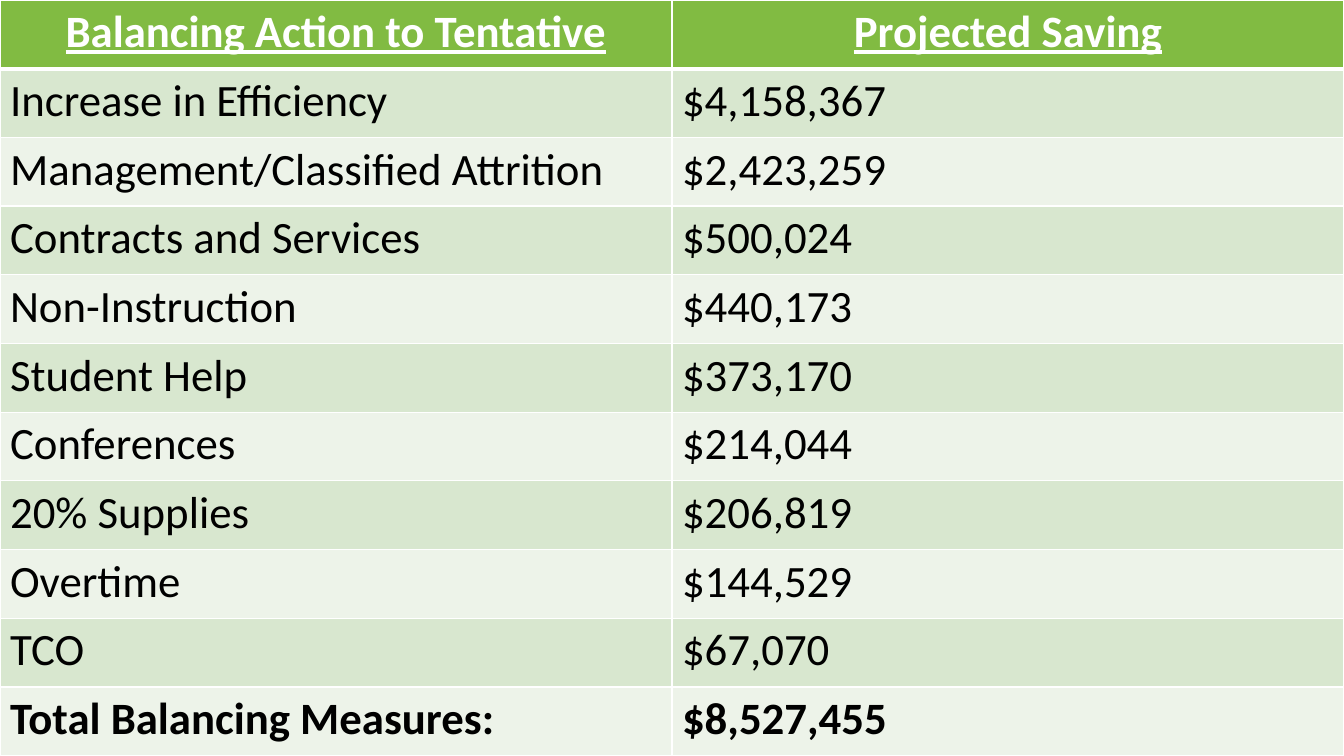
from dataclasses import dataclass

from lxml import etree
from pptx import Presentation
from pptx.dml.color import RGBColor
from pptx.enum import text
from pptx.oxml import ns
from pptx.util import Pt


@dataclass(frozen=True)
class Theme:
    font: str = "Calibri"
    size: int = 32
    background: str = "000000"
    header_fill: str = "81BB42"
    band_fills: tuple = ("D8E7CF", "EDF3E9")
    header_text: str = "FFFFFF"
    body_text: str = "000000"
    border: str = "FFFFFF"
    thin: int = 1
    thick: int = 3


THEME = Theme()
WIDTH, HEIGHT = 960, 540

SAVINGS = [
    ("Balancing Action to Tentative", "Projected Saving"),
    ("Increase in Efficiency", "$4,158,367"),
    ("Management/Classified Attrition", "$2,423,259"),
    ("Contracts and Services", "$500,024"),
    ("Non-Instruction", "$440,173"),
    ("Student Help", "$373,170"),
    ("Conferences", "$214,044"),
    ("20% Supplies", "$206,819"),
    ("Overtime", "$144,529"),
    ("TCO", "$67,070"),
    ("Total Balancing Measures:", "$8,527,455"),
]


def set_borders(cell, top, bottom):
    """Draw the four cell borders; top and bottom are widths in points."""
    properties = cell._tc.get_or_add_tcPr()
    widths = {"a:lnL": THEME.thin, "a:lnR": THEME.thin, "a:lnT": top, "a:lnB": bottom}
    for tag, width in widths.items():
        line = etree.SubElement(properties, ns.qn(tag), w=str(Pt(width)))
        fill = etree.SubElement(line, ns.qn("a:solidFill"))
        etree.SubElement(fill, ns.qn("a:srgbClr"), val=THEME.border)


def fill_cell(cell, wording, row, last_row):
    """Style one cell by its row: header, banded body or total."""
    header = row == 0
    # Borders go before the fill in the cell properties
    set_borders(
        cell,
        top=THEME.thick if row == 1 else THEME.thin,
        bottom=THEME.thick if header else THEME.thin,
    )
    color = THEME.header_fill if header else THEME.band_fills[(row - 1) % 2]
    cell.fill.solid()
    cell.fill.fore_color.rgb = RGBColor.from_string(color)

    cell.text = wording
    paragraph = cell.text_frame.paragraphs[0]
    paragraph.alignment = text.PP_ALIGN.CENTER if header else text.PP_ALIGN.LEFT
    font = paragraph.font
    font.name = THEME.font
    font.size = Pt(THEME.size)
    font.bold = row in (0, last_row)
    font.underline = header
    font.color.rgb = RGBColor.from_string(THEME.header_text if header else THEME.body_text)


def add_savings_table(slide, left, top, width, height):
    """Place the savings table in the given box, with equal rows and columns."""
    rows, columns = len(SAVINGS), len(SAVINGS[0])
    frame = slide.shapes.add_table(
        rows, columns, Pt(left), Pt(top), Pt(width), Pt(height)
    )
    for row, wordings in enumerate(SAVINGS):
        for column, wording in enumerate(wordings):
            fill_cell(frame.table.cell(row, column), wording, row, rows - 1)


def main():
    presentation = Presentation()
    presentation.slide_width, presentation.slide_height = Pt(WIDTH), Pt(HEIGHT)
    slide = presentation.slides.add_slide(presentation.slide_layouts[6])

    # Background
    slide.background.fill.solid()
    slide.background.fill.fore_color.rgb = RGBColor.from_string(THEME.background)

    # Full-slide table
    add_savings_table(slide, 0, 0, WIDTH, HEIGHT)
    presentation.save("out.pptx")


if __name__ == "__main__":
    main()
